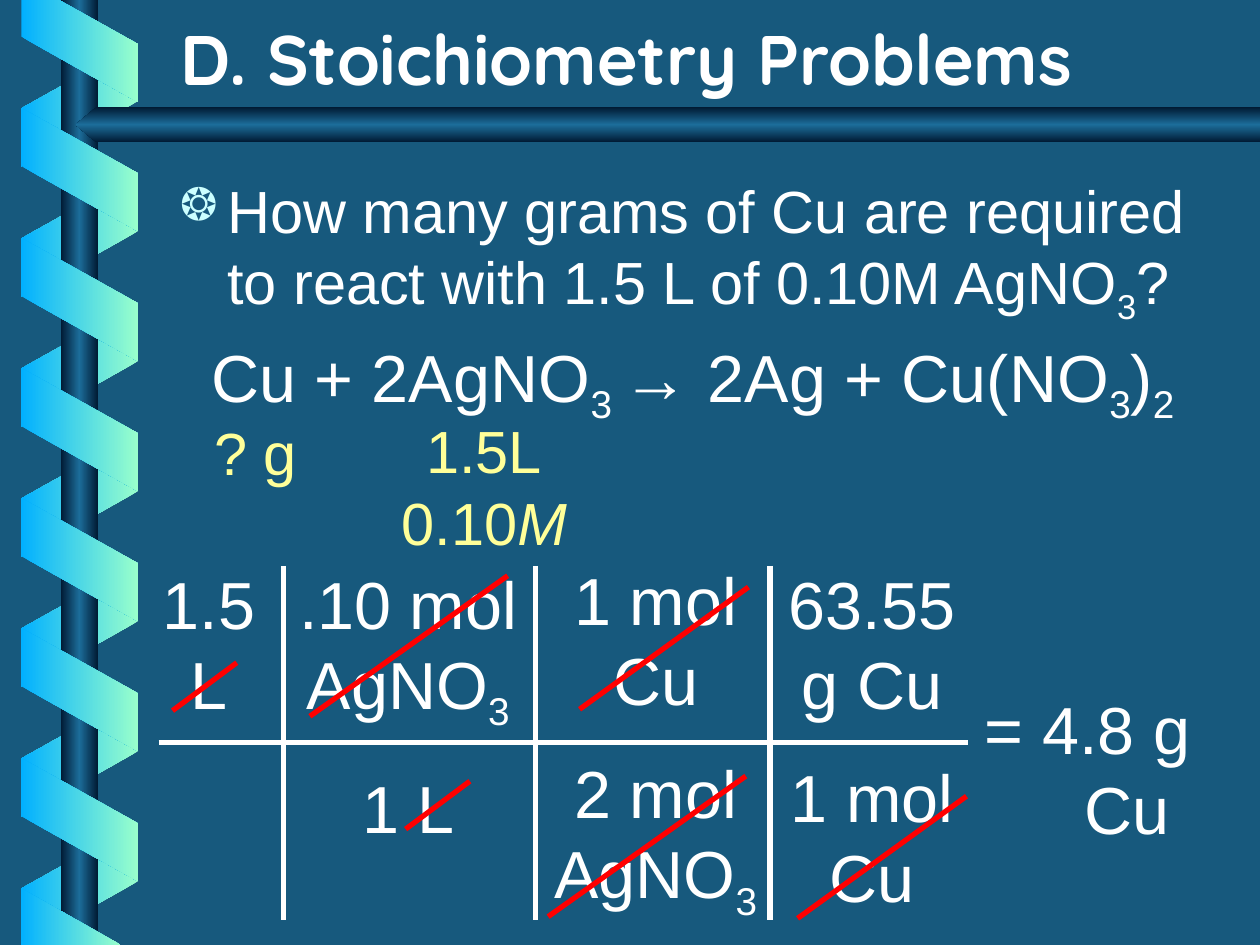
from dataclasses import dataclass

from lxml import etree
from pptx import Presentation
from pptx.dml.color import RGBColor
from pptx.enum.shapes import MSO_CONNECTOR, MSO_SHAPE
from pptx.enum.text import MSO_ANCHOR, PP_ALIGN
from pptx.oxml.ns import qn
from pptx.util import Pt

PARALLELOGRAM, RECTANGLE, PENTAGON = MSO_SHAPE.PARALLELOGRAM, MSO_SHAPE.RECTANGLE, MSO_SHAPE.PENTAGON
STRAIGHT = MSO_CONNECTOR.STRAIGHT
LEFT, CENTER = PP_ALIGN.LEFT, PP_ALIGN.CENTER
TOP, BOTTOM = MSO_ANCHOR.TOP, MSO_ANCHOR.BOTTOM


@dataclass(frozen=True)
class Theme:
    background: str = "17597D"
    text: str = "FFFFFF"
    given: str = "FFFF99"
    strike: str = "FF0000"
    bullet: str = "CCFFFF"
    shadow: str = "001932"
    ribbon: tuple = ("01B0FF", "99FFCC")
    rod: tuple = ("001932", "1C6D9A", "001932")
    heading_font: str = "Quicksand"
    body_font: str = "Arial"
    title_size: float = 40
    body_size: float = 34
    math_size: float = 38
    rule_width: float = 3


THEME = Theme()


@dataclass(frozen=True)
class Piece:
    text: str
    sub: bool = False
    italic: bool = False


@dataclass(frozen=True)
class Line:
    pieces: tuple
    before: float = 0
    margin: float = 27
    indent: float = -27
    spacing: float | None = None
    bullet: str = ""


@dataclass(frozen=True)
class Block:
    box: tuple
    lines: tuple
    size: float = THEME.math_size
    color: str = THEME.text
    align: PP_ALIGN = CENTER
    font: str = THEME.body_font
    anchor: MSO_ANCHOR = TOP
    heading: bool = False


@dataclass(frozen=True)
class Stroke:
    start: tuple
    end: tuple
    color: str


def line(*pieces: str | Piece, **options) -> Line:
    return Line(tuple(Piece(p) if isinstance(p, str) else p for p in pieces), **options)


def child(parent, tag: str, **attributes: str):
    return etree.SubElement(parent, qn(tag), attributes)


def paint_gradient(shape, colors: tuple, angle: int = 0) -> None:
    shape.shadow.inherit = False
    shape.line.fill.background()
    shape.fill.gradient()
    gradient = shape._element.spPr.find(qn("a:gradFill"))
    gradient.set("rotWithShape", "0")
    for old in list(gradient):
        gradient.remove(old)
    stops = child(gradient, "a:gsLst")
    for index, color in enumerate(colors):
        stop = child(stops, "a:gs", pos=str(index * 100000 // (len(colors) - 1)))
        child(stop, "a:srgbClr", val=color)
    child(gradient, "a:lin", ang=str(angle * 60000), scaled="0")


def draw_shape(slide, kind, box: tuple, colors: tuple, angle: int = 0,
               rotation: int = 0, flip: bool = False, adjust: float | None = None) -> None:
    shape = slide.shapes.add_shape(kind, *map(Pt, box))
    shape.rotation = rotation
    if flip:
        shape._element.spPr.find(qn("a:xfrm")).set("flipH", "1")
    if adjust is not None:
        shape.adjustments[0] = adjust
    paint_gradient(shape, colors, angle)


def draw_coils(slide, first_top: float, count: int, colors: tuple, rotation: int, flip: bool) -> None:
    for index in range(count):
        box = (10.2, first_top + index * 74.3, 70.6, 67)
        draw_shape(slide, PARALLELOGRAM, box, colors, 0, rotation, flip, 0.56)


def draw_ribbon_end(slide, points: list) -> None:
    builder = slide.shapes.build_freeform(Pt(points[0][0]), Pt(points[0][1]))
    builder.add_line_segments([(Pt(x), Pt(y)) for x, y in points[1:]], close=True)
    paint_gradient(builder.convert_to_shape(), THEME.ribbon)


def draw_stroke(slide, stroke: Stroke) -> None:
    connector = slide.shapes.add_connector(STRAIGHT, *map(Pt, stroke.start + stroke.end))
    connector.line.color.rgb = RGBColor.from_string(stroke.color)
    connector.line.width = Pt(THEME.rule_width)
    child(connector._element.spPr, "a:effectLst")


def add_text_shadow(run) -> None:
    effects = etree.Element(qn("a:effectLst"))
    cast = child(effects, "a:outerShdw", dist="35921", dir="2700000", algn="ctr")
    child(cast, "a:srgbClr", val=THEME.shadow)
    run._r.get_or_add_rPr().find(qn("a:solidFill")).addnext(effects)


def draw_block(slide, block: Block) -> None:
    frame = slide.shapes.add_textbox(*map(Pt, block.box)).text_frame
    frame.word_wrap = True
    frame.vertical_anchor = block.anchor
    for index, content in enumerate(block.lines):
        paragraph = frame.add_paragraph() if index else frame.paragraphs[0]
        paragraph.alignment = block.align
        paragraph.space_before = Pt(content.before)
        paragraph.line_spacing = content.spacing
        properties = paragraph._p.get_or_add_pPr()
        properties.set("marL", str(Pt(content.margin)))
        properties.set("indent", str(Pt(content.indent)))
        if content.bullet:
            child(child(properties, "a:buClr"), "a:srgbClr", val=THEME.bullet)
            child(properties, "a:buSzPct", val="75000")
            child(properties, "a:buChar", char=content.bullet)
        for piece in content.pieces:
            run = paragraph.add_run()
            run.text = piece.text
            run.font.size = Pt(block.size)
            run.font.name = block.font
            run.font.bold = block.heading
            run.font.italic = piece.italic
            run.font.color.rgb = RGBColor.from_string(block.color)
            if piece.sub:
                run._r.get_or_add_rPr().set("baseline", "-25000")
            if block.heading:
                add_text_shadow(run)


THREE = Piece("3", sub=True)
GAP = 19
BLOCKS = (
    Block((95.8, 0, 612, 60.5), (line("D. Stoichiometry Problems", margin=0, indent=0),),
          THEME.title_size, align=LEFT, font=THEME.heading_font, anchor=BOTTOM, heading=True),
    Block((95.8, 95.8, 624, 119), (line(
        "How many grams of Cu are required to react with 1.5 L of 0.10M AgNO", THREE, "?",
        bullet="❂"),), THEME.body_size, align=LEFT),
    Block((105, 183, 588, 65), (line(
        "Cu + 2AgNO", Piece("3 ", sub=True), "→ 2Ag + Cu(NO", THREE, ")",
        Piece("2 ", sub=True), spacing=1.1),)),
    Block((115.2, 234, 70, 56), (line("? g"),), THEME.body_size, THEME.given, LEFT),
    Block((216.7, 233.3, 120, 56), (line("1.5L"), line("0.10", Piece("M", italic=True))),
          THEME.body_size, THEME.given),
    Block((84.2, 318.2, 70.6, 89), (line("1.5"), line("L"))),
    Block((162, 318.2, 142.6, 212),
          (line(".10 mol"), line("AgNO", THREE), line("1 L", before=GAP))),
    Block((306.7, 316, 136, 212),
          (line("1 mol"), line("Cu"), line("2 mol", before=GAP), line("AgNO", THREE))),
    Block((437.8, 318.2, 121, 212),
          (line("63.55"), line("g Cu"), line("1 mol", before=GAP), line("Cu"))),
    Block((555.8, 389.5, 164, 118), (line("= 4.8 g"), line("Cu", margin=57, indent=0)), align=LEFT),
)
RULES = (Stroke((90.7, 424.5), (553, 424.5), THEME.text),) + tuple(
    Stroke((x, 323.3), (x, 525.6), THEME.text) for x in (162, 306, 440))
STRIKES = tuple(
    Stroke((x + width, y), (x, y + height), THEME.strike)
    for width, height, corners in (
        (113, 80.3, ((177.1, 329), (313.2, 443.5))),
        (96.5, 69.8, ((331.2, 335.5), (455.8, 455))),
        (36.7, 27.4, ((231.8, 446.4), (98.6, 378.7))),
    )
    for x, y in corners)


def main() -> None:
    deck = Presentation()
    deck.slide_width, deck.slide_height = Pt(720), Pt(540)
    slide = deck.slides.add_slide(deck.slide_layouts[6])
    slide.background.fill.solid()
    slide.background.fill.fore_color.rgb = RGBColor.from_string(THEME.background)
    draw_coils(slide, 26.4, 7, THEME.ribbon[::-1], 90, True)
    draw_shape(slide, RECTANGLE, (34.6, 0, 21.6, 540), THEME.rod)
    draw_coils(slide, 63.4, 6, THEME.ribbon, 270, False)
    draw_ribbon_end(slide, [(12.2, 0), (12.2, 20.9), (78.8, 58.3), (78.8, 25.2), (33.8, 0)])
    draw_ribbon_end(slide, [(12, 507.6), (12, 540), (69, 540)])
    draw_shape(slide, PENTAGON, (43.2, 61.2, 676.8, 20.2), THEME.rod, 90, flip=True, adjust=0.59)
    for stroke in RULES:
        draw_stroke(slide, stroke)
    for block in BLOCKS:
        draw_block(slide, block)
    for stroke in STRIKES:
        draw_stroke(slide, stroke)
    deck.save("out.pptx")


if __name__ == "__main__":
    main()
